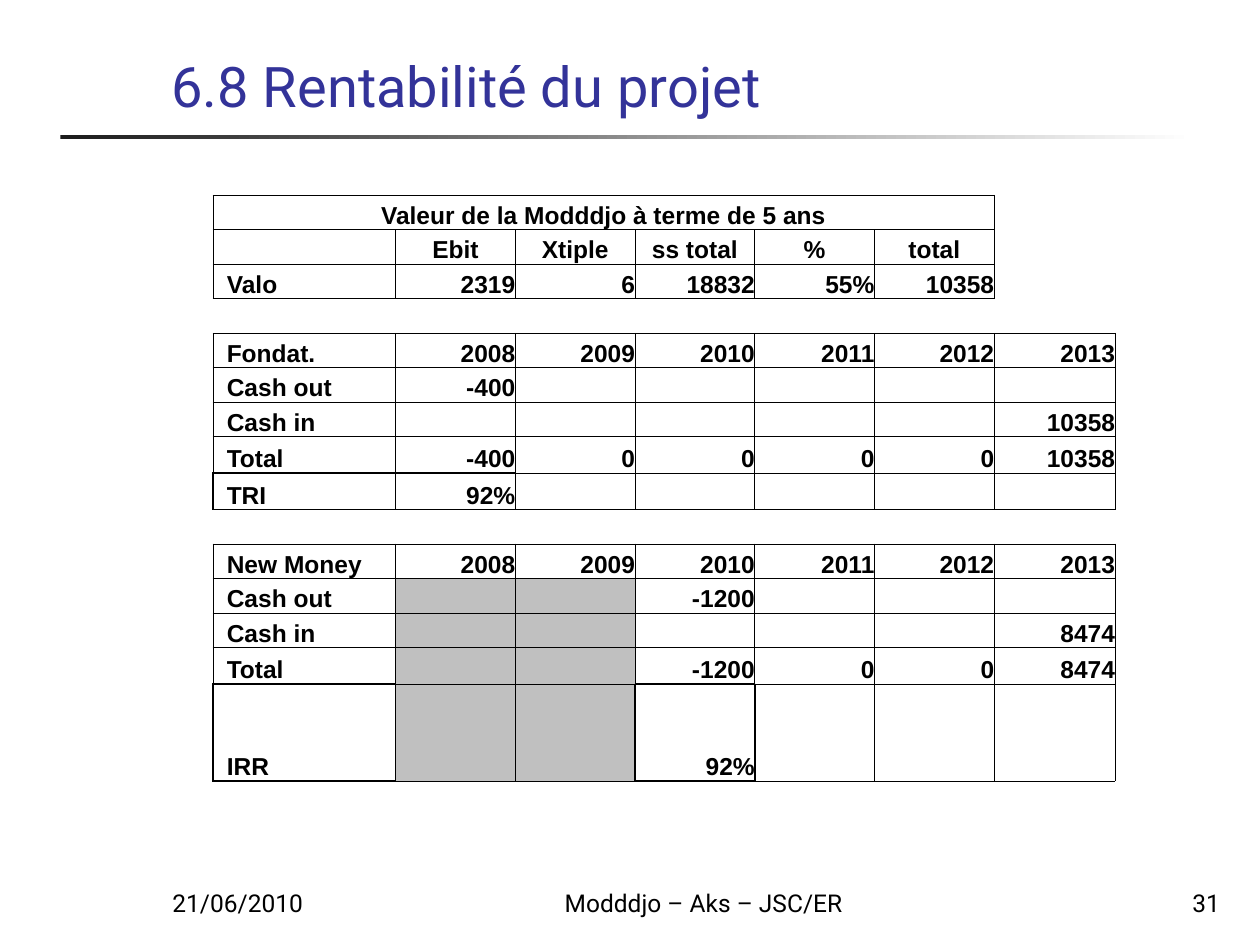
from dataclasses import dataclass

from lxml import etree
from pptx import Presentation
from pptx.dml.color import RGBColor
from pptx.enum.shapes import MSO_SHAPE
from pptx.enum.text import MSO_ANCHOR, PP_ALIGN
from pptx.oxml.ns import qn
from pptx.util import Inches, Pt

LEFT, MID, RIGHT = PP_ALIGN.LEFT, PP_ALIGN.CENTER, PP_ALIGN.RIGHT
BOTTOM = MSO_ANCHOR.BOTTOM
RECT = MSO_SHAPE.RECTANGLE


@dataclass(frozen=True)
class Theme:
    ink: str = "000000"
    title: str = "333399"
    dark: str = "1C1C1C"
    light: str = "FFFFFF"
    grey: str = "C0C0C0"
    face: str = "Roboto"
    grid: str = "Arial"
    head: int = 32
    body: int = 14
    thin: float = 0.5
    thick: float = 1


YEARS = [str(year) for year in range(2008, 2014)]
ROWS = [
    ["Valeur de la Modddjo à terme de 5 ans"],
    ["", "Ebit", "Xtiple", "ss total", "%", "total"],
    ["Valo", "2319", "6", "18832", "55%", "10358"],
    [],
    ["Fondat.", *YEARS],
    ["Cash out", "-400"],
    ["Cash in", "", "", "", "", "", "10358"],
    ["Total", "-400", "0", "0", "0", "0", "10358"],
    ["TRI", "92%"],
    [],
    ["New Money", *YEARS],
    ["Cash out", "", "", "-1200"],
    ["Cash in", "", "", "", "", "", "8474"],
    ["Total", "", "", "-1200", "0", "0", "8474"],
    ["IRR", "", "", "92%"],
]
WIDTHS = [1.45] + [0.95] * 5 + [0.96]
TALL = {7: 0.29, 8: 0.29, 13: 0.29, 14: 0.77}
HIGH = 4.65
BASE = (HIGH - sum(TALL.values())) / (len(ROWS) - len(TALL))
BOLD = {(8, 0), (8, 1), (14, 0), (14, 3)}
SHADE = {(row, col) for row in range(11, 15) for col in (1, 2)}
FRAME = {
    (row, col)
    for row in range(len(ROWS))
    for col in range(len(WIDTHS))
    if ROWS[row] and (row > 3 or col < 6)
}
SIDES = {"L": (0, -1), "R": (0, 1), "T": (-1, 0), "B": (1, 0)}


def apply(item, values):
    for name, value in values.items():
        setattr(item, name, value)


class Deck:
    def __init__(self, theme):
        self.theme = theme
        self.show = Presentation()
        apply(self.show, {"slide_width": Inches(10), "slide_height": Inches(7.5)})
        self.slide = self.show.slides.add_slide(self.show.slide_layouts[5])

    def words(self, frame, text, align, face, size, color, bold=False):
        para = frame.paragraphs[0]
        para.alignment = align
        if not text:
            etree.SubElement(para._p, qn("a:endParaRPr"), sz=str(size * 100))
            return
        run = para.add_run()
        run.text = text
        apply(run.font, {"name": face, "size": Pt(size), "bold": bold})
        run.font.color.rgb = RGBColor.from_string(color)

    def title(self, text, box):
        shape = self.slide.shapes.title
        apply(shape, dict(zip(("left", "top", "width", "height"), map(Inches, box))))
        apply(shape.text_frame, {"vertical_anchor": BOTTOM, "word_wrap": True})
        look = self.theme
        self.words(shape.text_frame, text, LEFT, look.face, look.head, look.title)

    def label(self, text, box, align):
        frame = self.slide.shapes.add_textbox(*map(Inches, box)).text_frame
        apply(frame, {"vertical_anchor": BOTTOM, "word_wrap": True})
        look = self.theme
        self.words(frame, text, align, look.face, look.body, look.ink)

    def rule(self, box):
        bar = self.slide.shapes.add_shape(RECT, *map(Inches, box))
        bar.shadow.inherit = False
        bar.line.fill.background()
        bar.fill.gradient()
        bar.fill.gradient_angle = 0
        for stop, color in zip(bar.fill.gradient_stops, (self.theme.dark, self.theme.light)):
            stop.color.rgb = RGBColor.from_string(color)

    def border(self, cell, spot):
        for side, (down, across) in SIDES.items():
            pair = {spot, (spot[0] + down, spot[1] + across)}
            size = self.theme.thick if pair & BOLD else self.theme.thin
            line = etree.SubElement(
                cell._tc.get_or_add_tcPr(), qn(f"a:ln{side}"), w=str(int(Pt(size)))
            )
            if pair & FRAME:
                fill = etree.SubElement(line, qn("a:solidFill"))
                etree.SubElement(fill, qn("a:srgbClr"), val=self.theme.ink)
            else:
                etree.SubElement(line, qn("a:noFill"))

    def cell(self, cell, spot, text):
        row, col = spot
        apply(cell, {
            "margin_left": Inches(0 if col or row == 0 else 0.11),
            "margin_right": 0,
            "margin_top": 0,
            "margin_bottom": 0,
            "vertical_anchor": BOTTOM,
        })
        self.border(cell, spot)
        if spot in SHADE:
            cell.fill.solid()
            cell.fill.fore_color.rgb = RGBColor.from_string(self.theme.grey)
        else:
            cell.fill.background()
        align = MID if row < 2 else RIGHT if col else LEFT
        look = self.theme
        self.words(cell.text_frame, text, align, look.grid, look.body, look.ink, True)

    def table(self, left, top):
        box = map(Inches, (left, top, sum(WIDTHS), HIGH))
        grid = self.slide.shapes.add_table(len(ROWS), len(WIDTHS), *box).table
        apply(grid, {"first_row": False, "horz_banding": False})
        for col, width in enumerate(WIDTHS):
            grid.columns[col].width = Inches(width)
        for row, texts in enumerate(ROWS):
            grid.rows[row].height = Inches(TALL.get(row, BASE))
            for col in range(len(WIDTHS)):
                text = texts[col] if col < len(texts) else ""
                self.cell(grid.cell(row, col), (row, col), text)
        grid.cell(0, 0).merge(grid.cell(0, 5))


def main():
    deck = Deck(Theme())
    deck.rule((0.48, 1.07, 9, 0.03))
    deck.title("6.8 Rentabilité du projet", (1.26, 0.29, 8.52, 0.7))
    deck.label("21/06/2010", (1.27, 6.83, 2.08, 0.5), LEFT)
    deck.label("Modddjo – Aks – JSC/ER", (4, 6.83, 3.17, 0.5), MID)
    deck.label("31", (7.7, 6.83, 2.08, 0.5), RIGHT)
    deck.table(1.69, 1.55)
    deck.show.save("out.pptx")


if __name__ == "__main__":
    main()
